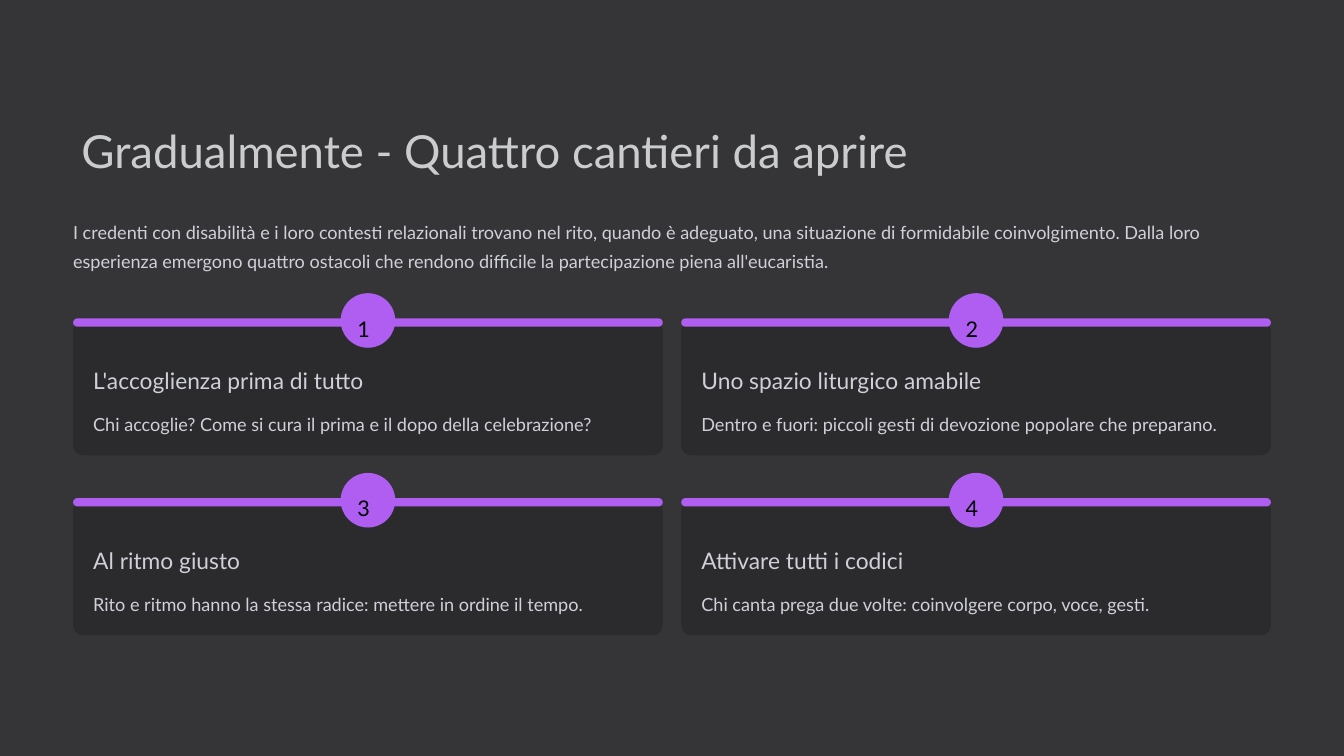
from pptx import Presentation
from pptx.dml.color import RGBColor
from pptx.enum.shapes import MSO_SHAPE as Shape
from pptx.enum.text import MSO_ANCHOR as Anchor, PP_ALIGN as Align
from pptx.util import Inches, Pt

TITLE = "Gradualmente - Quattro cantieri da aprire"
INTRO = (
    "I credenti con disabilità e i loro contesti relazionali trovano nel rito, "
    "quando è adeguato, una situazione di formidabile coinvolgimento. "
    "Dalla loro esperienza emergono quattro ostacoli che rendono difficile "
    "la partecipazione piena all'eucaristia."
)
CARDS = [
    ("L'accoglienza prima di tutto",
     "Chi accoglie? Come si cura il prima e il dopo della celebrazione?"),
    ("Uno spazio liturgico amabile",
     "Dentro e fuori: piccoli gesti di devozione popolare che preparano."),
    ("Al ritmo giusto",
     "Rito e ritmo hanno la stessa radice: mettere in ordine il tempo."),
    ("Attivare tutti i codici",
     "Chi canta prega due volte: coinvolgere corpo, voce, gesti."),
]
COLORS = {
    "background": "353538",
    "card": "2B2B2E",
    "accent": "B05EF1",
    "title": "CBCCCE",
    "text": "CFD0D8",
    "number": "000000",
}
FONT = "Lato"
LEFT, TOP = 0.87, 3.82
CARD_W, CARD_H = 7.02, 1.6
STEP_X, STEP_Y = 7.24, 2.14
BADGE = 0.65
PAD = 0.24


def rgb(name):
    return RGBColor.from_string(COLORS[name])


def write(sp, text, size, leading, color):
    tf = sp.text_frame
    tf.margin_left = tf.margin_right = tf.margin_top = tf.margin_bottom = 0
    tf.word_wrap = True
    tf.vertical_anchor = Anchor.TOP
    tf.text = text
    p = tf.paragraphs[0]
    p.alignment = Align.LEFT
    p.line_spacing = Pt(leading)
    font = p.runs[0].font
    font.name, font.size = FONT, Pt(size)
    font.color.rgb = rgb(color)


def add_text(slide, x, y, w, h, *style):
    write(slide.shapes.add_textbox(Inches(x), Inches(y), Inches(w), Inches(h)), *style)


def add_block(slide, kind, x, y, w, h, color, radius=None):
    sp = slide.shapes.add_shape(kind, Inches(x), Inches(y), Inches(w), Inches(h))
    sp.shadow.inherit = False
    sp.fill.solid()
    sp.fill.fore_color.rgb = rgb(color)
    sp.line.fill.background()
    if radius is not None:
        sp.adjustments[0] = radius


def add_card(slide, number, x, y, heading, body):
    badge_x = x + (CARD_W - BADGE) / 2
    add_block(slide, Shape.ROUNDED_RECTANGLE, x, y, CARD_W, CARD_H, "card", 0.075)
    add_block(slide, Shape.ROUNDED_RECTANGLE, x, y - 0.03, CARD_W, 0.1, "accent", 0.5)
    add_block(slide, Shape.OVAL, badge_x, y - 0.33, BADGE, BADGE, "accent")
    add_text(slide, badge_x + 0.2, y - 0.17, 0.26, 0.33, str(number), 18.5, 30, "number")
    text_w = CARD_W - 2 * PAD
    add_text(slide, x + PAD, y + 0.54, text_w, 0.34, heading, 19.5, 24, "text")
    add_text(slide, x + PAD, y + 1.01, text_w, 0.35, body, 15.5, 25, "text")


def main():
    prs = Presentation()
    prs.slide_width, prs.slide_height = Inches(16), Inches(9)
    slide = prs.slides.add_slide(prs.slide_layouts[5])
    slide.background.fill.solid()
    slide.background.fill.fore_color.rgb = rgb("background")

    title = slide.shapes.title
    title.left, title.top = Inches(0.97), Inches(1.44)
    title.width, title.height = Inches(14.16), Inches(0.68)
    write(title, TITLE, 39, 48.5, "title")
    add_text(slide, LEFT, 2.55, 14.26, 0.69, INTRO, 15.5, 25, "text")

    for i, (heading, body) in enumerate(CARDS):
        row, col = divmod(i, 2)
        add_card(slide, i + 1, LEFT + col * STEP_X, TOP + row * STEP_Y, heading, body)

    prs.save("out.pptx")


if __name__ == "__main__":
    main()
